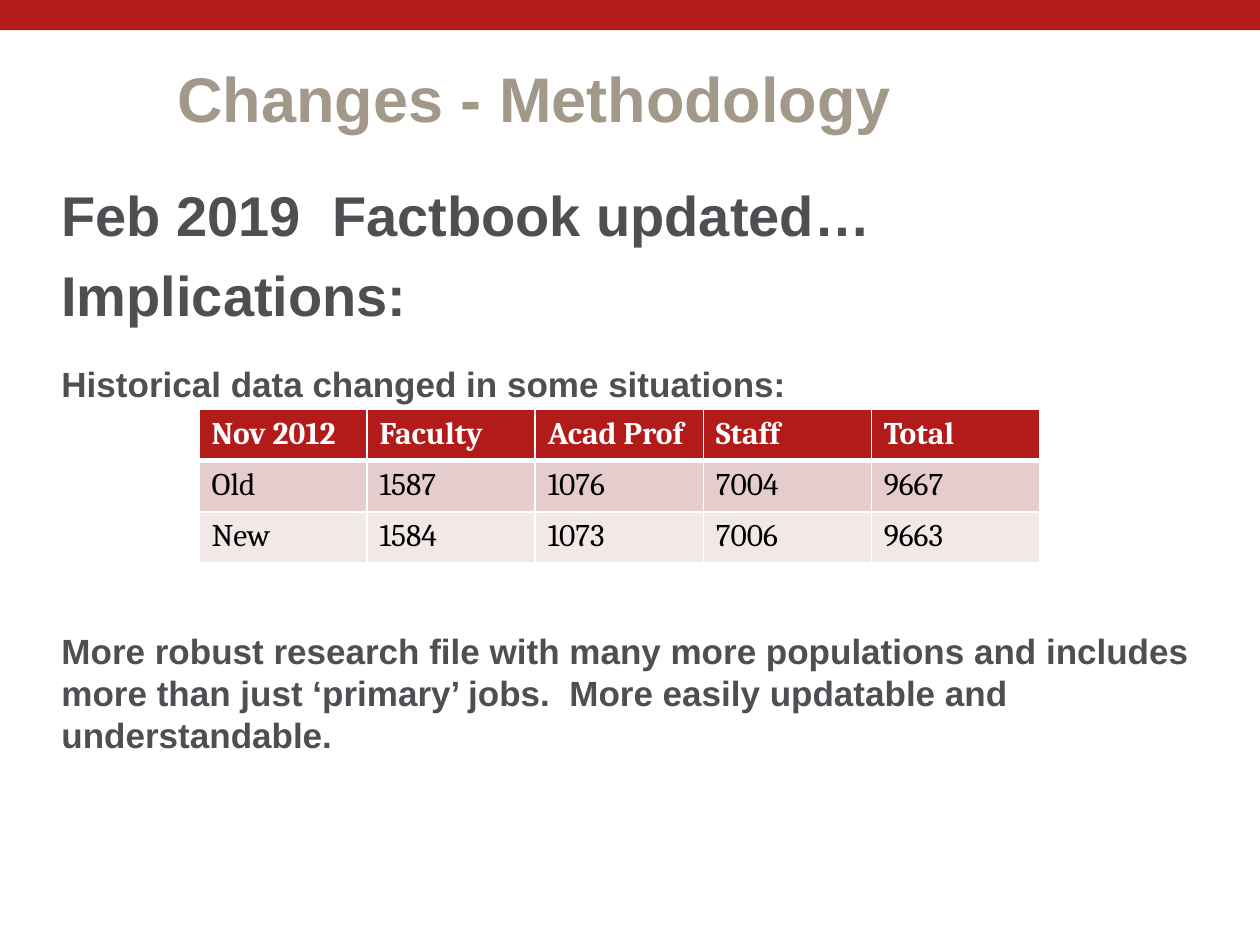
from lxml import etree
from pptx import Presentation
from pptx.dml.color import RGBColor
from pptx.enum.shapes import MSO_SHAPE
from pptx.enum.text import MSO_ANCHOR
from pptx.oxml.ns import qn
from pptx.util import Inches, Pt

RECT = MSO_SHAPE.RECTANGLE
MIDDLE = MSO_ANCHOR.MIDDLE
RED = RGBColor(0xB3, 0x1B, 0x1B)
TAN = RGBColor(0xA2, 0x99, 0x8B)
GRAY = RGBColor(0x4D, 0x4F, 0x53)
WHITE = RGBColor(0xFF, 0xFF, 0xFF)
BLACK = RGBColor(0, 0, 0)
ROSE = RGBColor(0xE5, 0xCD, 0xCD)
PALE = RGBColor(0xF2, 0xE8, 0xE8)


def style(para, size, color, bold=True, name="Arial"):
    form = {"size": Pt(size), "bold": bold, "name": name}
    for key, value in form.items():
        setattr(para.font, key, value)
    para.font.color.rgb = color


def border(cell, side, width):
    line = etree.SubElement(cell._tc.get_or_add_tcPr(), qn("a:ln" + side),
                            w=str(Pt(width)))
    fill = etree.SubElement(line, qn("a:solidFill"))
    etree.SubElement(fill, qn("a:srgbClr"), val=str(WHITE))


prs = Presentation()
prs.slide_width, prs.slide_height = Inches(10), Inches(7.5)
slide = prs.slides.add_slide(prs.slide_layouts[6])
shapes = slide.shapes

# Top band
band = shapes.add_shape(RECT, 0, 0, Inches(10), Inches(0.24))
band.shadow.inherit = False
band.fill.solid()
band.fill.fore_color.rgb = RED
band.line.fill.background()

# Body: text, size, space before
body = shapes.add_textbox(Inches(0.33), Inches(1.33), Inches(9.47), Inches(5.54))
frame = body.text_frame
frame.word_wrap = True
frame.margin_top = Inches(0.1)
lines = [
    ("Feb 2019  Factbook updated…", 32, 0),
    ("Implications:", 32, 7.5),
    ("Historical data changed in some situations:", 20, 20),
    ("More robust research file with many more populations and includes "
     "more than just ‘primary’ jobs.  More easily updatable and "
     "understandable.", 20, 128.5),
]
for i, (text, size, gap) in enumerate(lines):
    para = frame.add_paragraph() if i else frame.paragraphs[0]
    para.text = text
    para.space_before = Pt(gap)
    para._p.get_or_add_pPr().set("marL", str(Inches(0.06)))
    style(para, size, GRAY)

# Title
title = shapes.add_textbox(Inches(1.31), Inches(0.4), Inches(8.51), Inches(0.75))
frame = title.text_frame
frame.word_wrap = True
frame.vertical_anchor = MIDDLE
frame.text = "Changes - Methodology"
style(frame.paragraphs[0], 36, TAN)

# Head counts
data = [
    ("Nov 2012", "Faculty", "Acad Prof", "Staff", "Total"),
    ("Old", "1587", "1076", "7004", "9667"),
    ("New", "1584", "1073", "7006", "9663"),
]
fills = [RED, ROSE, PALE]
table = shapes.add_table(len(data), len(data[0]), Inches(1.58), Inches(3.25),
                         Inches(6.67), Inches(1.22)).table
for r, row in enumerate(data):
    head = r == 0
    for c, text in enumerate(row):
        cell = table.cell(r, c)
        cell.text = text
        style(cell.text_frame.paragraphs[0], 18, WHITE if head else BLACK,
              head, "Cambria")
        for side in "LRTB":
            thick = (side == "B" and head) or (side == "T" and r == 1)
            border(cell, side, 3 if thick else 1)
        cell.fill.solid()
        cell.fill.fore_color.rgb = fills[r]

prs.save("out.pptx")
